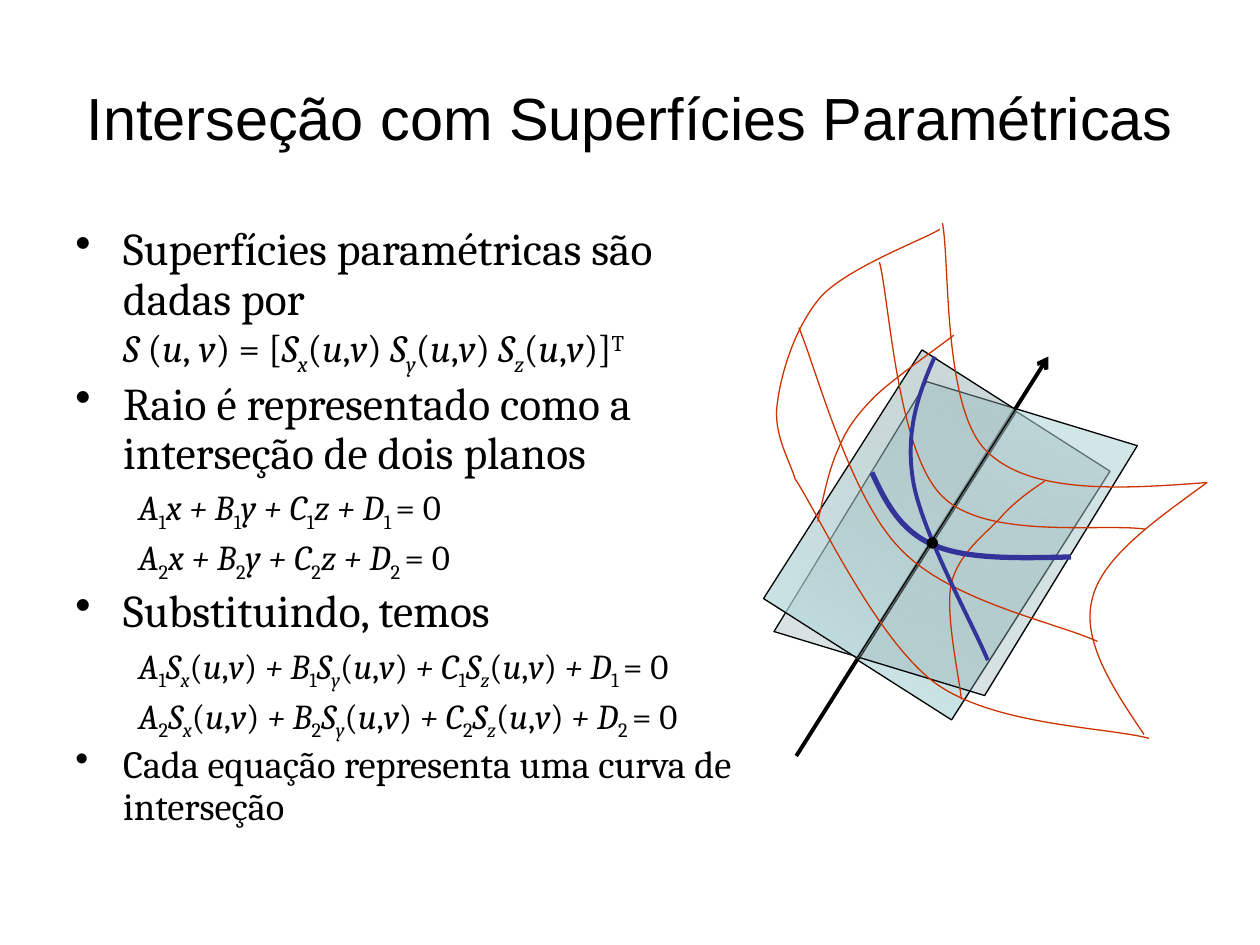
from itertools import groupby

from lxml import etree
from pptx import Presentation
from pptx.dml.color import RGBColor
from pptx.enum.shapes import MSO_CONNECTOR, MSO_SHAPE
from pptx.enum.text import MSO_ANCHOR, PP_ALIGN
from pptx.oxml.ns import qn
from pptx.util import Inches, Pt

STRAIGHT = MSO_CONNECTOR.STRAIGHT
PARALLELOGRAM, OVAL = MSO_SHAPE.PARALLELOGRAM, MSO_SHAPE.OVAL
MIDDLE, CENTER = MSO_ANCHOR.MIDDLE, PP_ALIGN.CENTER

THEME = {
    "title_font": "Arial", "body_font": "Cambria",
    "title": 34, "point": 26, "small": 22, "equation": 20,
    "black": RGBColor(0, 0, 0),
    "surface": RGBColor(0xCC, 0x33, 0x00),
    "intersection": RGBColor(0x33, 0x33, 0x99),
    "plane": (RGBColor(0xBB, 0xE0, 0xE3), RGBColor(0x86, 0xA0, 0xA2)),
    "outline": 0.75,
}

TITLE = "Interseção com Superfícies Paramétricas"

# Each paragraph: bulleted or not, then pieces of (style, size, text).
# In math, "_" lowers and "^" raises the next character.
BODY = [
    (True, [("text", "point", "Superfícies paramétricas são dadas por \v"),
            ("math", "small", "S (u, v) = [S_x(u,v) S_y(u,v) S_z(u,v)]^T")]),
    (True, [("text", "point", "Raio é representado como a interseção de dois planos")]),
    (False, [("math", "equation", "A_1x + B_1y + C_1z + D_1_ = 0")]),
    (False, [("math", "equation", "A_2x + B_2y + C_2z + D_2_ = 0")]),
    (True, [("text", "point", "Substituindo, temos")]),
    (False, [("math", "equation",
              "A_1S_x(u,v) + B_1S_y(u,v) + C_1S_z(u,v) + D_1_ = 0")]),
    (False, [("math", "equation",
              "A_2S_x(u,v) + B_2S_y(u,v) + C_2S_z(u,v) + D_2_ = 0")]),
    (True, [("text", "small", "Cada equação representa uma curva de interseção")]),
]
BASELINES = {"_": -25000, "^": 30000}
ROMAN = "()[],=0123456789"

RAY = (6.32, 6, 8.32, 2.83)
# box, rotation, skew, gradient angle, opacity at both ends
PLANES = [
    ((6.64, 4.05, 2.34, 0.88), 302.5, 0, 0, (76, 40)),
    ((6.42, 3.15, 2.33, 2.25), 16.9, 0.259, 270, (62, 29)),
    ((5.89, 3.56, 2.34, 0.88), 302.5, 0, 0, (76, 40)),
]
# Bezier curves: a start, then two control points and an end for each piece
SURFACE_CURVES = [
    [(7.48, 1.77), (7.54, 2.07), (7.48, 3.24), (7.83, 3.58),
     (8.18, 3.93), (8.92, 3.88), (9.58, 3.83)],
    [(6.31, 3.8), (6.49, 4.07), (6.95, 5.07), (7.42, 5.42),
     (7.89, 5.76), (8.77, 5.77), (9.12, 5.86)],
    [(7.46, 1.82), (7.31, 1.91), (6.74, 2.12), (6.52, 2.35), (6.31, 2.59),
     (6.2, 2.96), (6.17, 3.2), (6.13, 3.44), (6.28, 3.68), (6.31, 3.8)],
    [(9.58, 3.83), (9.17, 4.13), (8.75, 4.42), (8.67, 4.75),
     (8.58, 5.08), (8.83, 5.46), (9.08, 5.83)],
    [(6.98, 2.08), (7.06, 2.39), (7.12, 3.59), (7.48, 3.94),
     (7.83, 4.29), (8.76, 4.15), (9.09, 4.2)],
    [(6.34, 2.6), (6.47, 2.9), (6.74, 3.94), (7.14, 4.35),
     (7.53, 4.77), (8.38, 4.94), (8.71, 5.09)],
    [(7.57, 2.66), (7.47, 2.74), (7.11, 2.99), (6.95, 3.14), (6.8, 3.29),
     (6.72, 3.4), (6.65, 3.57), (6.57, 3.74), (6.52, 4.02), (6.49, 4.14)],
    [(8.29, 3.82), (8.23, 3.86), (8.06, 3.97), (7.94, 4.11), (7.82, 4.24),
     (7.61, 4.39), (7.55, 4.63), (7.5, 4.87), (7.61, 5.36), (7.63, 5.55)],
]
INTERSECTION_CURVES = [
    (2.25, [(7.42, 2.83), (7.29, 3.12), (7.18, 3.43), (7.25, 3.83),
            (7.32, 4.23), (7.72, 4.95), (7.84, 5.24)]),
    (3, [(8.5, 4.42), (8.09, 4.43), (7.68, 4.44), (7.42, 4.33),
         (7.15, 4.22), (7.03, 3.99), (6.92, 3.75)]),
]
HIT_POINT = (7.36, 4.27, 0.08, 0.08)


def inches(values):
    return [Inches(value) for value in values]


def set_line(shape, color, width):
    shape.line.color.rgb = color
    shape.line.width = Pt(width)


def math_runs(text):
    """Yield (text, italic, baseline) for each stretch of one style."""
    styled, baseline = [], None
    for character in text:
        if character in BASELINES:
            baseline = BASELINES[character]
            continue
        italic = character not in ROMAN and baseline != BASELINES["^"]
        styled.append((character, italic, baseline))
        baseline = None
    for (italic, baseline), group in groupby(styled, key=lambda item: item[1:]):
        yield "".join(item[0] for item in group), italic, baseline


def add_run(paragraph, text, size, italic=False, baseline=None):
    run = paragraph.add_run()
    run.text = text
    run.font.size = Pt(size)
    run.font.italic = italic
    if baseline:
        run.font._element.set("baseline", str(baseline))


def add_piece(paragraph, style, size, text):
    if style == "math":
        for stretch, italic, baseline in math_runs(text):
            add_run(paragraph, stretch, size, italic, baseline)
        return
    add_run(paragraph, text.rstrip("\v"), size)
    if text.endswith("\v"):
        paragraph.add_line_break()


def set_indent(paragraph, bulleted):
    properties = paragraph._p.get_or_add_pPr()
    margin, indent = (0.38, -0.38) if bulleted else (0.81, -0.31)
    properties.set("marL", str(Inches(margin)))
    properties.set("indent", str(Inches(indent)))
    bullet = etree.Element(qn("a:buChar" if bulleted else "a:buNone"))
    if bulleted:
        bullet.set("char", "•")
    properties.find(qn("a:defRPr")).addprevious(bullet)


def add_title(slide):
    title = slide.shapes.title
    title.left, title.top, title.width, title.height = inches((0.5, 0.3, 9, 1.25))
    title.text_frame.text = TITLE
    title.text_frame.vertical_anchor = MIDDLE
    paragraph = title.text_frame.paragraphs[0]
    paragraph.alignment = CENTER
    paragraph.font.name = THEME["title_font"]
    paragraph.font.size = Pt(THEME["title"])
    paragraph.font.color.rgb = THEME["black"]


def add_body(slide):
    frame = slide.shapes.add_textbox(*inches((0.5, 1.75, 5.67, 4.95))).text_frame
    frame.word_wrap = True
    for index, (bulleted, pieces) in enumerate(BODY):
        paragraph = frame.add_paragraph() if index else frame.paragraphs[0]
        paragraph.line_spacing = 0.9
        paragraph.space_before = Pt(round(0.2 * THEME[pieces[0][1]], 1))
        paragraph.font.name = THEME["body_font"]
        paragraph.font.color.rgb = THEME["black"]
        set_indent(paragraph, bulleted)
        for style, size, text in pieces:
            add_piece(paragraph, style, THEME[size], text)


def add_ray(slide):
    ray = slide.shapes.add_connector(STRAIGHT, *inches(RAY))
    set_line(ray, THEME["black"], 2.25)
    etree.SubElement(ray.line._get_or_add_ln(), qn("a:tailEnd"), type="arrow")
    etree.SubElement(ray._element.spPr, qn("a:effectLst"))


def add_plane(slide, box, rotation, skew, angle, opacities):
    plane = slide.shapes.add_shape(PARALLELOGRAM, *inches(box))
    plane.shadow.inherit = False
    plane.rotation = rotation
    plane.adjustments[0] = skew
    plane.fill.gradient()
    plane.fill.gradient_angle = angle
    for stop, position, color, opacity in zip(
            plane.fill.gradient_stops, (0, 1), THEME["plane"], opacities):
        stop.position = position
        stop.color.rgb = color
    colors = plane._element.spPr.iter(qn("a:srgbClr"))
    for color, opacity in zip(colors, opacities):
        etree.SubElement(color, qn("a:alpha"), val=str(opacity * 1000))
    set_line(plane, THEME["black"], THEME["outline"])


def add_curve(slide, points, color, width):
    """Draw a freeform and join each three of its points into a Bezier piece."""
    start, *others = [inches(point) for point in points]
    builder = slide.shapes.build_freeform(*start)
    builder.add_line_segments(others, close=False)
    curve = builder.convert_to_shape()
    segments = list(curve._element.iter(qn("a:lnTo")))
    for first in range(0, len(segments), 3):
        piece = etree.Element(qn("a:cubicBezTo"))
        segments[first].addprevious(piece)
        for segment in segments[first:first + 3]:
            piece.append(segment[0])
            segment.getparent().remove(segment)
    curve.shadow.inherit = False
    curve.fill.background()
    set_line(curve, color, width)


def add_hit_point(slide):
    dot = slide.shapes.add_shape(OVAL, *inches(HIT_POINT))
    dot.shadow.inherit = False
    dot.fill.solid()
    dot.fill.fore_color.rgb = THEME["black"]
    set_line(dot, THEME["black"], THEME["outline"])


def main():
    presentation = Presentation()
    presentation.slide_width, presentation.slide_height = inches((10, 7.5))
    slide = presentation.slides.add_slide(presentation.slide_layouts[5])
    add_title(slide)
    add_body(slide)
    add_ray(slide)
    for plane in PLANES:
        add_plane(slide, *plane)
    for points in SURFACE_CURVES:
        add_curve(slide, points, THEME["surface"], THEME["outline"])
    for width, points in INTERSECTION_CURVES:
        add_curve(slide, points, THEME["intersection"], width)
    add_hit_point(slide)
    presentation.save("out.pptx")


if __name__ == "__main__":
    main()
